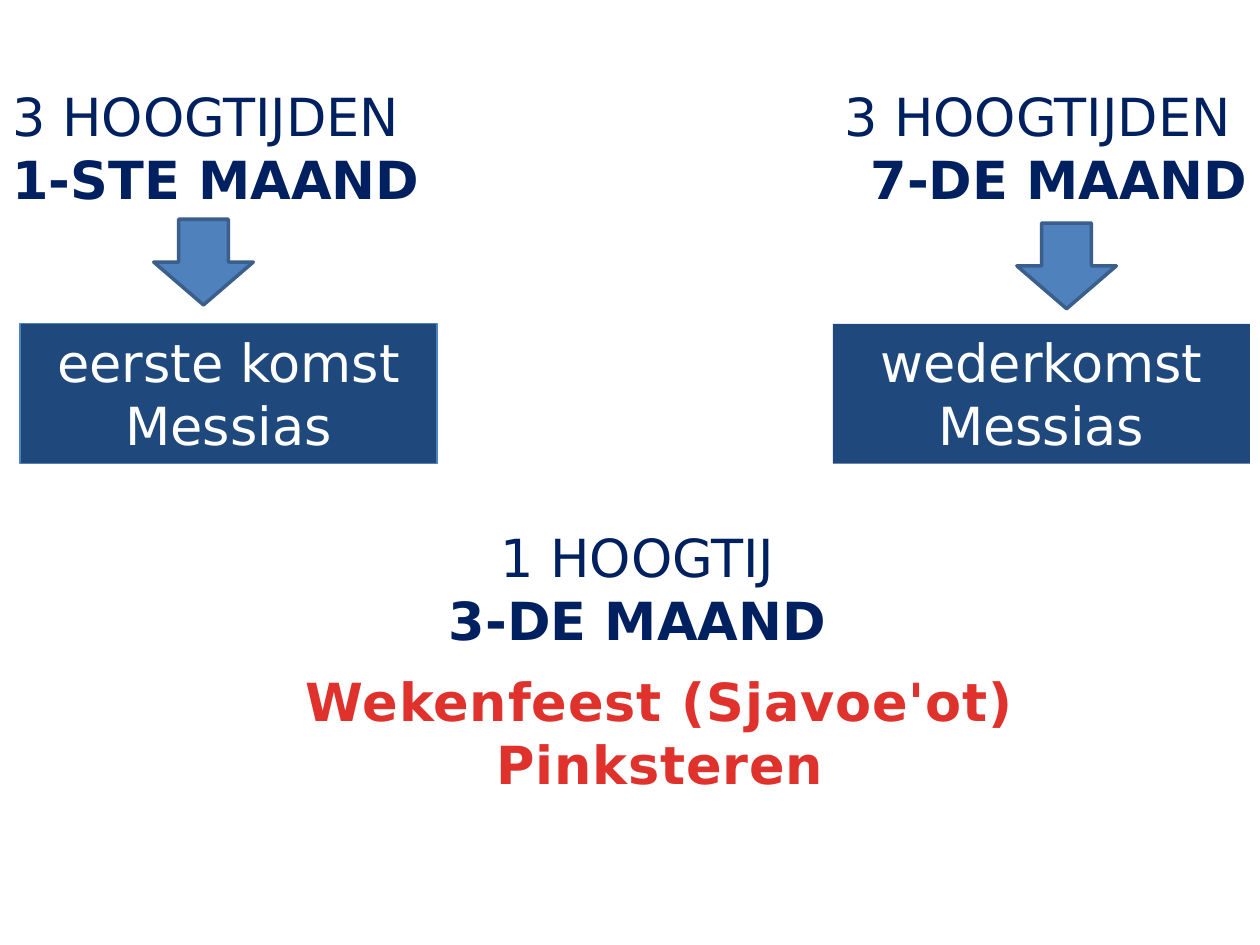
from dataclasses import dataclass
from typing import Optional

from pptx import Presentation
from pptx.dml.color import RGBColor
from pptx.enum.shapes import MSO_SHAPE
from pptx.enum.text import MSO_ANCHOR, MSO_AUTO_SIZE, PP_ALIGN
from pptx.util import Inches, Pt


@dataclass(frozen=True)
class Theme:
    font: str = "DejaVu Sans"
    size: float = 30
    heading: str = "002060"
    feast: str = "E0322D"
    light: str = "FFFFFF"
    panel: str = "1F497D"
    panel_line: str = "4F81BD"
    arrow: str = "4F81BD"
    arrow_line: str = "3A5F8C"


@dataclass(frozen=True)
class Area:
    left: float
    top: float
    width: float
    height: float = 1.11

    def lengths(self) -> list:
        return [Inches(n) for n in (self.left, self.top, self.width, self.height)]


@dataclass(frozen=True)
class Season:
    """A group of feasts, the coming it points to and the arrow between."""
    heading: Area
    month: str
    align: PP_ALIGN
    arrow: Area
    panel: Area
    coming: str
    panel_line: Optional[str] = None


THEME = Theme()
SEASONS = (
    Season(Area(0, 0.62, 3.46), "1-STE MAAND", PP_ALIGN.LEFT,
           Area(1.22, 1.74, 0.79, 0.68), Area(0.16, 2.57, 3.31),
           "eerste komst Messias", THEME.panel_line),
    Season(Area(6.54, 0.62, 3.46), "7-DE MAAND", PP_ALIGN.RIGHT,
           Area(8.07, 1.77, 0.79, 0.68), Area(6.61, 2.57, 3.31),
           "wederkomst Messias"),
)


def write(shape, *lines: str, color: str, align: PP_ALIGN = PP_ALIGN.CENTER,
          bold_lines: tuple = (), spacing: float = 0) -> None:
    """Fill one paragraph with lines; bold_lines holds the bold line numbers."""
    frame = shape.text_frame
    frame.word_wrap = True
    frame.auto_size = MSO_AUTO_SIZE.SHAPE_TO_FIT_TEXT
    frame.vertical_anchor = MSO_ANCHOR.TOP
    para = frame.paragraphs[0]
    para.alignment = align
    for number, line in enumerate(lines):
        if number:
            para.add_line_break()
        span = para.add_run()
        span.text = line
        font = span.font
        font.name = THEME.font
        font.size = Pt(THEME.size)
        font.bold = number in bold_lines
        font.color.rgb = RGBColor.from_string(color)
        if spacing:
            span._r.get_or_add_rPr().set("spc", str(round(spacing * 100)))


def add_text(page, area: Area, *lines: str, **text_format) -> None:
    write(page.shapes.add_textbox(*area.lengths()), *lines, **text_format)


def add_filled(page, kind: MSO_SHAPE, area: Area, fill: str,
               line: Optional[str] = None, line_width: float = 0.75):
    shape = page.shapes.add_shape(kind, *area.lengths())
    shape.shadow.inherit = False
    shape.fill.solid()
    shape.fill.fore_color.rgb = RGBColor.from_string(fill)
    if line:
        shape.line.color.rgb = RGBColor.from_string(line)
        shape.line.width = Pt(line_width)
    else:
        shape.line.fill.background()
    return shape


def add_season(page, season: Season) -> None:
    add_text(page, season.heading, "3 HOOGTIJDEN ", season.month,
             color=THEME.heading, align=season.align, bold_lines=(1,))
    panel = add_filled(page, MSO_SHAPE.RECTANGLE, season.panel, THEME.panel,
                       season.panel_line)
    write(panel, season.coming, color=THEME.light)
    add_filled(page, MSO_SHAPE.DOWN_ARROW, season.arrow, THEME.arrow,
               THEME.arrow_line, line_width=2)


def main() -> None:
    deck = Presentation()
    deck.slide_width, deck.slide_height = Inches(10), Inches(7.5)
    page = deck.slides.add_slide(deck.slide_layouts[6])
    for season in SEASONS:
        add_season(page, season)
    add_text(page, Area(1.83, 4.12, 6.46), "1 HOOGTIJ", "3-DE MAAND",
             color=THEME.heading, bold_lines=(1,))
    add_text(page, Area(2.01, 5.26, 6.46), "Wekenfeest (Sjavoe'ot)", "Pinksteren",
             color=THEME.feast, bold_lines=(0, 1), spacing=0.5)
    deck.save("out.pptx")


if __name__ == "__main__":
    main()
